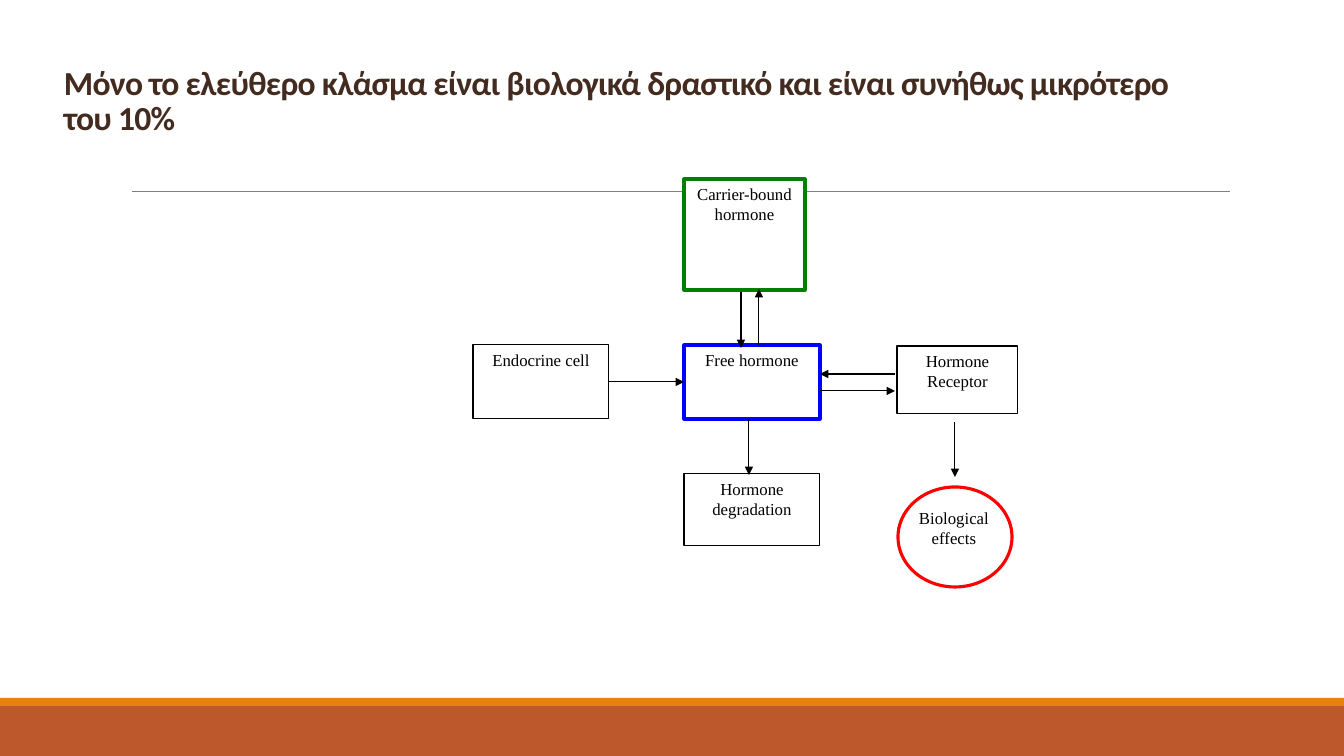
"""Build the slide on free and carrier-bound hormone."""
from lxml import etree
from pptx import Presentation, util as u
from pptx.dml.color import RGBColor
from pptx.enum import shapes, text
from pptx.oxml.ns import qn

PX = 914400 / 100.8
COLORS = {"white": "FFFFFF", "black": "000000", "title": "432B20", "rule": "808080",
          "amber": "E48312", "rust": "BD582C",
          "green": "008000", "blue": "0000FF", "red": "FF0000"}
TITLE = "Μόνο το ελεύθερο κλάσμα είναι βιολογικά δραστικό και είναι συνήθως μικρότερο του 10%"
TITLE_BOX = (54, 31, 1175, 111)
BANDS = [((0, 706, 1344, 50), "rust"), ((0, 698, 1344, 8), "amber")]
RULE = (132, 191, 1230, 191)
STAGES = {
    "carrier": (["Carrier-bound hormone"], (684, 179, 121, 111), "green", 2.25),
    "endocrine": (["Endocrine cell"], (473, 345, 136, 74), "black", 0.75),
    "free": (["Free hormone"], (684, 345, 136, 74), "blue", 2.25),
    "receptor": (["Hormone Receptor"], (897, 346, 121, 68), "black", 0.75),
    "degradation": (["Hormone", "degradation"], (684, 474, 136, 72), "black", 0.75),
}
EFFECTS_OVAL = (898, 487, 114, 100)
EFFECTS = (["Biological effects"], (894, 503, 120, 71))
SECRETION = (609, 382, 684, 382)
ARROWS = [
    (820, 391, 895, 391),
    (741, 292, 741, 348),
    (749, 419, 749, 475),
    (759, 345, 759, 289),
    (895, 374, 820, 374),
    (955, 422, 955, 477),
]


def px(lengths):
    return [u.Emu(round(length * PX)) for length in lengths]


def rgb(name):
    return RGBColor.from_string(COLORS[name])


def add_block(slide, kind, box, fill, edge=None, weight=0):
    block = slide.shapes.add_shape(kind, *px(box))
    block.shadow.inherit = False
    block.fill.solid()
    block.fill.fore_color.rgb = rgb(fill)
    if edge:
        block.line.color.rgb = rgb(edge)
        block.line.width = u.Pt(weight)
    else:
        block.line.fill.background()
    return block


def add_line(slide, ends, color, weight, arrow=True):
    line = slide.shapes.add_connector(shapes.MSO_CONNECTOR.STRAIGHT, *px(ends))
    line.line.color.rgb = rgb(color)
    line.line.width = u.Pt(weight)
    if arrow:
        etree.SubElement(line.line._get_or_add_ln(), qn("a:tailEnd"), type="triangle")
    etree.SubElement(line._element.spPr, qn("a:effectLst"))
    return line


def write(frame, lines, font, size, color, align, bold=False):
    frame.word_wrap = True
    frame.vertical_anchor = text.MSO_ANCHOR.TOP
    frame.text = "\n".join(lines)
    for paragraph in frame.paragraphs:
        paragraph.alignment = align
        paragraph.font.name = font
        paragraph.font.size = u.Pt(size)
        paragraph.font.bold = bold
        paragraph.font.color.rgb = rgb(color)


def write_label(frame, lines):
    write(frame, lines, "Times New Roman", 12, "black", text.PP_ALIGN.CENTER)


def add_title(slide):
    frame = slide.shapes.add_textbox(*px(TITLE_BOX)).text_frame
    write(frame, [TITLE], "Calibri", 24, "title", text.PP_ALIGN.LEFT, bold=True)
    frame.vertical_anchor = text.MSO_ANCHOR.BOTTOM
    heading = frame.paragraphs[0]
    heading.line_spacing = 0.85
    heading.runs[0].font._element.set("spc", "-50")


def main():
    deck = Presentation()
    deck.slide_width, deck.slide_height = px((1344, 756))
    slide = deck.slides.add_slide(deck.slide_layouts[6])
    rectangle = shapes.MSO_SHAPE.RECTANGLE

    for box, fill in BANDS:
        add_block(slide, rectangle, box, fill)
    add_line(slide, RULE, "rule", 0.5, arrow=False)
    add_title(slide)

    stages = {}
    for name, (lines, box, edge, weight) in STAGES.items():
        stages[name] = add_block(slide, rectangle, box, "white", edge, weight)
        write_label(stages[name].text_frame, lines)

    secretion = add_line(slide, SECRETION, "black", 0.75)
    secretion.begin_connect(stages["endocrine"], 3)
    secretion.end_connect(stages["free"], 1)
    for ends in ARROWS:
        add_line(slide, ends, "black", 0.75)

    add_block(slide, shapes.MSO_SHAPE.OVAL, EFFECTS_OVAL, "white", "red", 2.25)
    lines, box = EFFECTS
    write_label(slide.shapes.add_textbox(*px(box)).text_frame, lines)
    deck.save("out.pptx")


if __name__ == "__main__":
    main()
